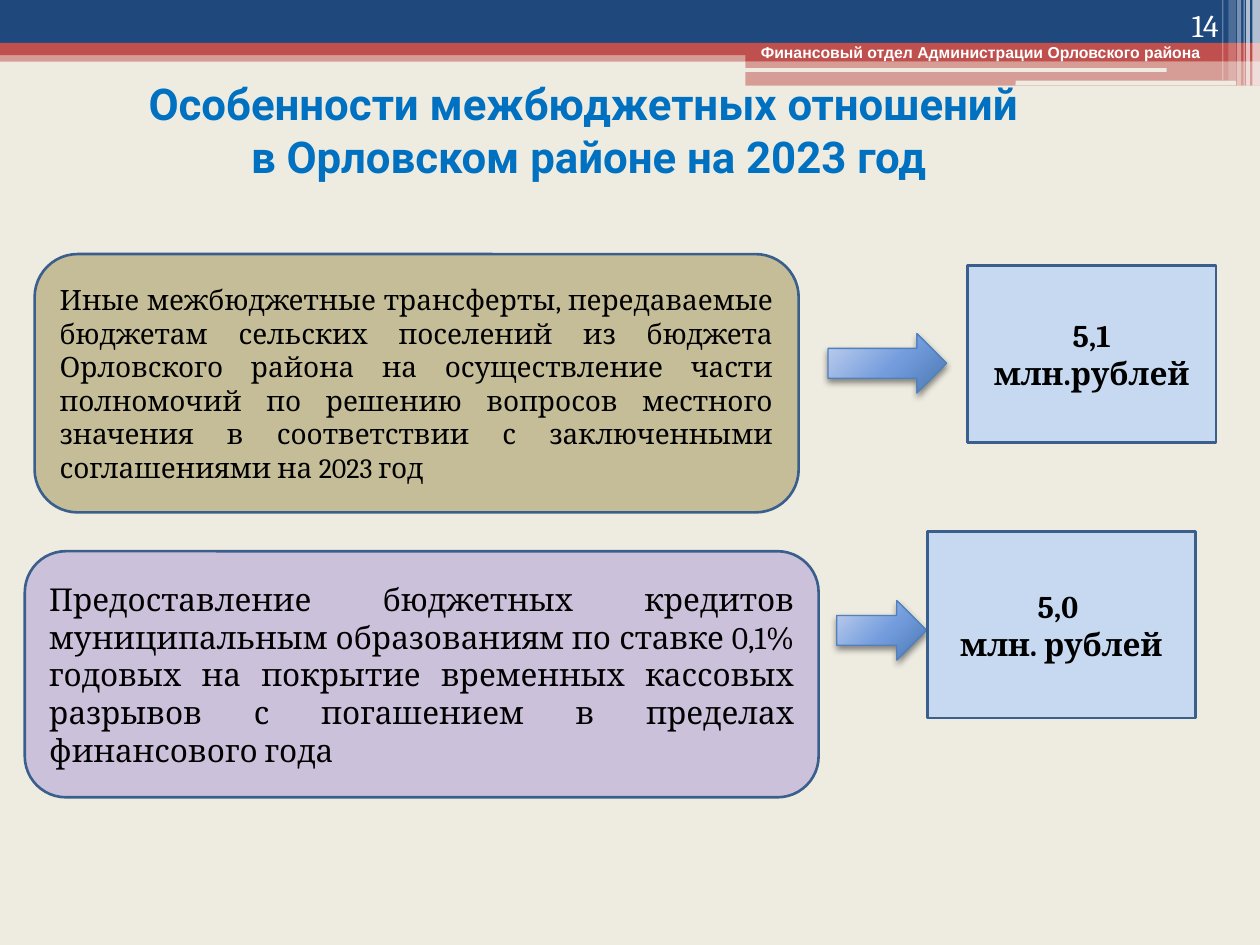
from lxml import etree
from pptx import Presentation
from pptx.dml.color import RGBColor
from pptx.enum.shapes import MSO_SHAPE
from pptx.enum.text import MSO_ANCHOR, PP_ALIGN
from pptx.oxml import parse_xml
from pptx.oxml.ns import nsdecls, qn
from pptx.util import Pt

NAVY, RED, CREAM, WHITE, BLACK = "1F497D", "C0504D", "EEECE1", "FFFFFF", "000000"
OUTLINE, AMOUNT_FILL = "3A5F8C", "C6D9F1"

# left, top, width, height, colour, opacity in percent
HEADER_BANDS = [
    (0, 28.8, 720, 6.5, RED, 50),
    (0, 0, 720, 24.5, NAVY, 100),
    (0, 24.5, 720, 7, RED, 100),
    (426, 28, 294, 7, RED, 100),
    (426, 35, 294, 14, RED, 50),
]
HEADER_LINES = [(425.5, 38.9, 241.2, 2.2), (580.3, 46.1, 126, 2.7)]
# left, width, height, opacity in percent
HEADER_STRIPES = [
    (715.7, 4.3, 49, 65),
    (712.1, 2.2, 49, 65),
    (710.6, 0.7, 49, 60),
    (707, 2.2, 49, 40),
    (702, 4.3, 46, 20),
    (698.4, 0.7, 46, 30),
]


def color(hex_string):
    return RGBColor.from_string(hex_string)


def add_block(slide, kind, box, fill, opacity=100, outline=None):
    shape = slide.shapes.add_shape(kind, *map(Pt, box))
    shape.shadow.inherit = False
    shape.fill.solid()
    shape.fill.fore_color.rgb = color(fill)
    if opacity < 100:
        solid_color = shape.fill._xPr.find(qn("a:solidFill"))[0]
        alpha = etree.SubElement(solid_color, qn("a:alpha"))
        alpha.set("val", str(opacity * 1000))
    if outline:
        shape.line.color.rgb = color(outline)
        shape.line.width = Pt(1.5)
    else:
        shape.line.fill.background()
    return shape


def write(shape, lines, size, font, hex_string, align, bold=False, anchor=MSO_ANCHOR.MIDDLE):
    text_frame = shape.text_frame
    text_frame.word_wrap = True
    text_frame.vertical_anchor = anchor
    text_frame.text = "\n".join(lines)
    for paragraph in text_frame.paragraphs:
        paragraph.alignment = align
        for run in paragraph.runs:
            run.font.size = Pt(size)
            run.font.name = font
            run.font.bold = bold
            run.font.color.rgb = color(hex_string)


def add_label(slide, box, *text_style, **options):
    label = slide.shapes.add_textbox(*map(Pt, box))
    write(label, *text_style, **options)
    return label


def add_header(slide):
    for *box, fill, opacity in HEADER_BANDS:
        add_block(slide, MSO_SHAPE.RECTANGLE, box, fill, opacity)
    for box in HEADER_LINES:
        add_block(slide, MSO_SHAPE.ROUNDED_RECTANGLE, box, CREAM)
    for left, width, height, opacity in HEADER_STRIPES:
        add_block(slide, MSO_SHAPE.RECTANGLE, (left, 0, width, height), WHITE, opacity)
    add_label(slide, (427.7, 20.9, 281.5, 18), ["Финансовый отдел Администрации Орловского района"],
              9, "Arial", WHITE, PP_ALIGN.LEFT, bold=True, anchor=MSO_ANCHOR.TOP)
    add_label(slide, (643.7, 0, 59.8, 28.8), ["14"],
              18, "Cambria", WHITE, PP_ALIGN.RIGHT, anchor=MSO_ANCHOR.BOTTOM)


def add_title(slide):
    title = add_label(slide, (0, 37.4, 666, 73.4),
                      ["Особенности межбюджетных отношений \vв Орловском районе на 2023 год"],
                      25, "Roboto", "0070C0", PP_ALIGN.CENTER, bold=True)
    properties = title.text_frame.paragraphs[0]._p.get_or_add_pPr()
    properties.set("marL", str(Pt(6.5)))
    properties.set("indent", "0")


def add_description(slide, box, fill, text, size):
    shape = add_block(slide, MSO_SHAPE.ROUNDED_RECTANGLE, box, fill, outline=OUTLINE)
    write(shape, [text], size, "Cambria", BLACK, PP_ALIGN.JUSTIFY)


def add_amount(slide, box, lines):
    shape = add_block(slide, MSO_SHAPE.RECTANGLE, box, AMOUNT_FILL, outline=OUTLINE)
    write(shape, lines, 18, "Cambria", BLACK, PP_ALIGN.CENTER, bold=True)


def add_arrow(slide, box):
    """Add a right arrow with a radial gradient and a soft shadow below."""
    arrow = add_block(slide, MSO_SHAPE.RIGHT_ARROW, box, "739CDD", outline="4F81BD")
    arrow.line.width = Pt(0.75)
    stops = "".join(
        f'<a:gs pos="{position * 1000}"><a:srgbClr val="{stop}"/></a:gs>'
        for position, stop in [(0, "C4D2EE"), (55, "739CDD"), (100, "4A78B0")])
    gradient = parse_xml(
        f'<a:gradFill {nsdecls("a")} rotWithShape="1"><a:gsLst>{stops}</a:gsLst>'
        '<a:path path="circle">'
        '<a:fillToRect l="-40000" t="-90000" r="140000" b="190000"/></a:path></a:gradFill>')
    shadow = parse_xml(
        f'<a:outerShdw {nsdecls("a")} blurRad="{Pt(4)}" dist="{Pt(2)}" dir="5400000" '
        f'rotWithShape="0"><a:srgbClr val="{BLACK}"><a:alpha val="45000"/></a:srgbClr>'
        '</a:outerShdw>')
    properties = arrow._element.spPr
    properties.replace(properties.find(qn("a:solidFill")), gradient)
    properties.find(qn("a:effectLst")).append(shadow)


def main():
    presentation = Presentation()
    presentation.slide_width, presentation.slide_height = Pt(720), Pt(540)
    slide = presentation.slides.add_slide(presentation.slide_layouts[6])
    slide.background.fill.solid()
    slide.background.fill.fore_color.rgb = color(CREAM)

    add_header(slide)
    add_title(slide)

    add_description(
        slide, (19.8, 145.2, 436.6, 147.6), "C4BD97",
        "Иные межбюджетные трансферты, передаваемые бюджетам сельских поселений из бюджета "
        "Орловского района на осуществление части полномочий по решению вопросов местного "
        "значения в соответствии с заключенными соглашениями на 2023 год", 16)
    add_arrow(slide, (473.2, 190.6, 67.8, 34))
    add_amount(slide, (552.8, 151.7, 142, 101), ["5,1", "млн.рублей"])

    add_description(
        slide, (14.2, 315, 453.6, 140.6), "CCC1DA",
        "Предоставление бюджетных кредитов муниципальным образованиям по ставке 0,1% годовых "
        "на покрытие временных кассовых разрывов с погашением в пределах финансового года", 18)
    add_arrow(slide, (478.1, 343.2, 51.4, 34))
    add_amount(slide, (529.9, 303.6, 153.3, 106.8), ["5,0 ", "млн. рублей"])

    presentation.save("out.pptx")


if __name__ == "__main__":
    main()
